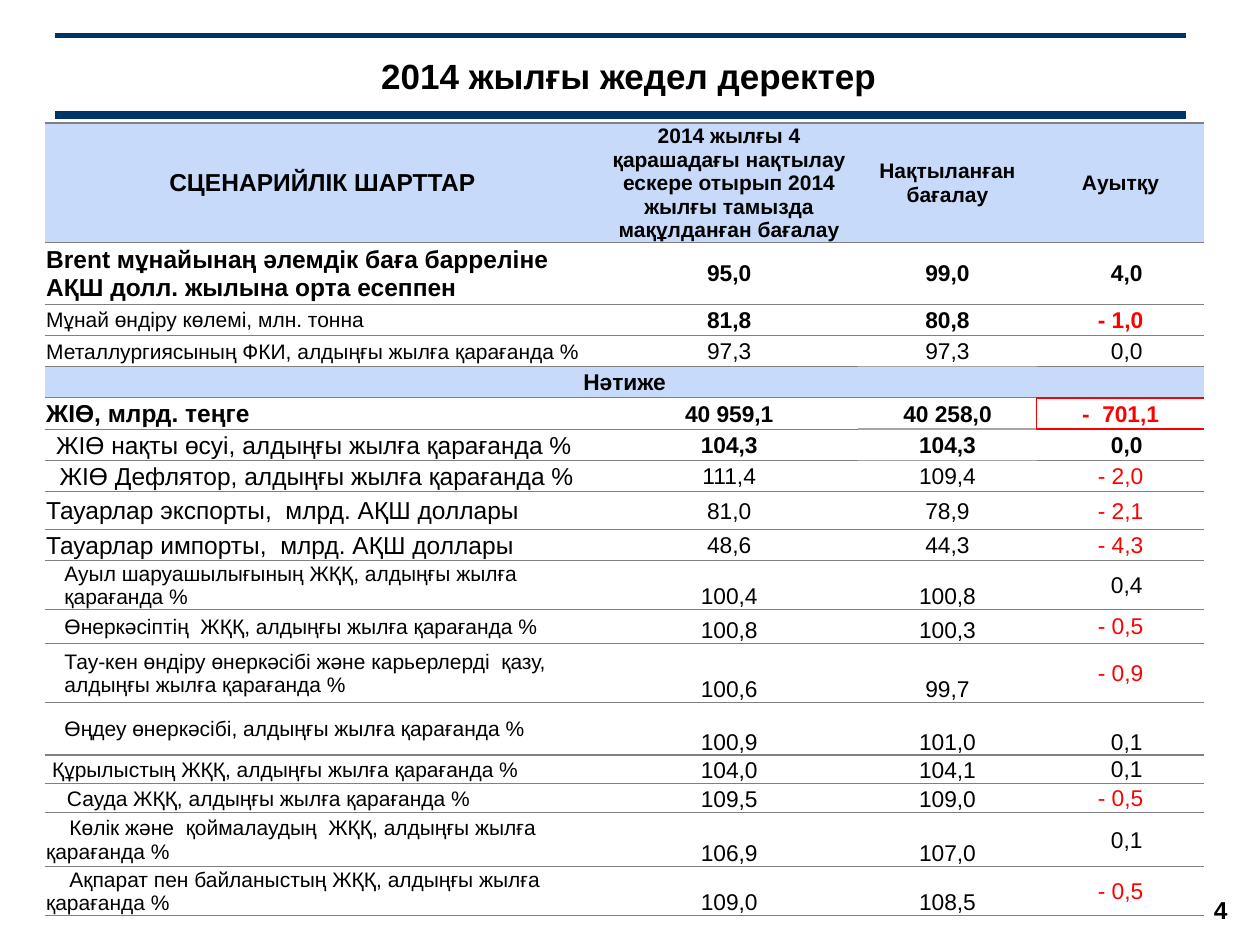
from dataclasses import dataclass

from pptx import Presentation
from pptx.dml.color import RGBColor
from pptx.enum.shapes import MSO_CONNECTOR, MSO_SHAPE
from pptx.enum.text import MSO_ANCHOR, PP_ALIGN
from pptx.oxml.ns import qn
from pptx.util import Cm, Pt
from lxml.etree import SubElement

COLORS = {
    "navy": "003366",
    "black": "000000",
    "white": "FFFFFF",
    "red": "FF0000",
    "header": "C7DAF9",
    "rule": "808080",
    "light_rule": "A6A6A6",
}
FONT = "Arial"
COLUMN_WIDTHS = [11.2, 5.2, 3.6, 3.38]
HEADERS = [
    ("СЦЕНАРИЙЛІК ШАРТТАР", 14),
    ("2014 жылғы 4 қарашадағы нақтылау ескере отырып 2014 жылғы тамызда мақұлданған бағалау", 12),
    ("Нақтыланған\nбағалау", 12),
    ("Ауытқу", 12),
]
HEADER_HEIGHT = 2.4
SECTION = "Нәтиже"
SECTION_ROW = 4
RED_ROW = 5
THIN = ("rule", 0.75)
LIGHT = ("light_rule", 1)
RED = ("red", 1)
SPECIAL_BORDERS = {
    (3, 2): {"B": LIGHT},
    (5, 2): {"R": RED, "B": LIGHT},
    (5, 3): {"L": RED, "T": RED, "B": RED},
    (6, 2): {"T": LIGHT, "B": LIGHT},
    (6, 3): {"T": RED},
    (7, 2): {"T": LIGHT},
}


@dataclass
class Row:
    height: float
    label: str
    values: tuple
    size: int = 12
    label_bold: bool = False
    bold: bool = False
    inset: float = 0.03
    first_indent: float = 0
    low: bool = False
    change_low: bool = False


ROWS = [
    Row(1.25, "Brent мұнайынаң әлемдік баға барреліне\vАҚШ долл. жылына орта есеппен",
        ("95,0", "99,0", "4,0"), 14, True, True),
    Row(0.63, "Мұнай өндіру көлемі, млн. тонна", ("81,8", "80,8", "- 1,0"), bold=True),
    Row(0.63, "Металлургиясының ФКИ, алдыңғы жылға қарағанда %", ("97,3", "97,3", "0,0")),
    Row(0.63, SECTION, ()),
    Row(0.63, "ЖІӨ, млрд. теңге", ("40 959,1", "40 258,0", "-  701,1"), 14, True, True),
    Row(0.63, "ЖІӨ нақты өсуі, алдыңғы жылға қарағанда %", ("104,3", "104,3", "0,0"),
        14, bold=True, inset=0.23),
    Row(0.63, "ЖІӨ Дефлятор, алдыңғы жылға қарағанда %", ("111,4", "109,4", "- 2,0"),
        14, inset=0.3),
    Row(0.76, "Тауарлар экспорты,  млрд. АҚШ доллары", ("81,0", "78,9", "- 2,1"), 14),
    Row(0.63, "Тауарлар импорты,  млрд. АҚШ доллары", ("48,6", "44,3", "- 4,3"), 14),
    Row(0.97, "Ауыл шаруашылығының ЖҚҚ, алдыңғы жылға қарағанда %",
        ("100,4", "100,8", "0,4"), inset=0.4, low=True),
    Row(0.69, "Өнеркәсіптің  ЖҚҚ, алдыңғы жылға қарағанда %",
        ("100,8", "100,3", "- 0,5"), inset=0.4, low=True),
    Row(1.19, "Тау-кен өндіру өнеркәсібі және карьерлерді  қазу,\nалдыңғы жылға қарағанда %",
        ("100,6", "99,7", "- 0,9"), inset=0.4, low=True),
    Row(1.06, "Өңдеу өнеркәсібі, алдыңғы жылға қарағанда %",
        ("100,9", "101,0", "0,1"), inset=0.4, low=True, change_low=True),
    Row(0.58, "Құрылыстың ЖҚҚ, алдыңғы жылға қарағанда %",
        ("104,0", "104,1", "0,1"), inset=0.15, low=True),
    Row(0.58, "Сауда ЖҚҚ, алдыңғы жылға қарағанда %",
        ("109,5", "109,0", "- 0,5"), inset=0.45, low=True),
    Row(1.09, "Көлік және  қоймалаудың  ЖҚҚ, алдыңғы жылға қарағанда %",
        ("106,9", "107,0", "0,1"), first_indent=0.47, low=True),
    Row(0.97, "Ақпарат пен байланыстың ЖҚҚ, алдыңғы жылға қарағанда %",
        ("109,0", "108,5", "- 0,5"), first_indent=0.47, low=True),
]


def rgb(name):
    return RGBColor.from_string(COLORS[name])


def write(frame, text, size, bold=False, color="black", align=PP_ALIGN.CENTER):
    frame.word_wrap = True
    for index, content in enumerate(text.split("\n")):
        para = frame.paragraphs[0] if index == 0 else frame.add_paragraph()
        para.alignment = align
        for part, line in enumerate(content.split("\v")):
            if part:
                para.add_line_break()
            span = para.add_run()
            span.text = line
            span.font.name = FONT
            span.font.size = Pt(size)
            span.font.bold = bold
            span.font.color.rgb = rgb(color)


def fill_box(box, color):
    box.fill.solid()
    box.fill.fore_color.rgb = rgb(color)


def add_rule(page, top, weight):
    line = page.shapes.add_connector(
        MSO_CONNECTOR.STRAIGHT, Cm(23.9), Cm(top), Cm(1.1), Cm(top))
    line.line.color.rgb = rgb("navy")
    line.line.width = Pt(weight)
    SubElement(line._element.spPr, qn("a:effectLst"))


def add_title(page, text):
    title = page.shapes.title
    title.left, title.top, title.width, title.height = Cm(1.1), Cm(0.8), Cm(22.9), Cm(1.44)
    fill_box(title, "white")
    title.text_frame.vertical_anchor = MSO_ANCHOR.MIDDLE
    write(title.text_frame, text, 20, True)
    para = title.text_frame.paragraphs[0]
    para.space_before = Pt(6)
    para._p.get_or_add_pPr().set("marL", str(Cm(0.25)))


def add_page_number(page, number):
    box = page.shapes.add_shape(MSO_SHAPE.RECTANGLE, Cm(23.85), Cm(17.63), Cm(1.52), Cm(1.4))
    box.shadow.inherit = False
    box.line.fill.background()
    fill_box(box, "white")
    box.text_frame.vertical_anchor = MSO_ANCHOR.MIDDLE
    write(box.text_frame, number, 14, True)


def format_cell(cell, borders, color="white", inset=0.03, anchor=MSO_ANCHOR.MIDDLE):
    cell.margin_left = Cm(inset)
    cell.margin_right = cell.margin_top = Cm(0.03)
    cell.margin_bottom = 0
    cell.vertical_anchor = anchor
    properties = cell._tc.get_or_add_tcPr()
    sides = {"L": None, "R": None, "T": THIN, "B": THIN, **borders}
    for side, style in sides.items():
        line = SubElement(properties, qn(f"a:ln{side}"))
        if style is None:
            SubElement(line, qn("a:noFill"))
            continue
        name, weight = style
        line.set("w", str(Pt(weight)))
        solid = SubElement(line, qn("a:solidFill"))
        SubElement(solid, qn("a:srgbClr")).set("val", COLORS[name])
    fill_box(cell, color)


def fill_row(table, index, row):
    label = table.cell(index, 0)
    format_cell(label, {}, inset=row.inset)
    write(label.text_frame, row.label, row.size, row.label_bold, align=PP_ALIGN.LEFT)
    if row.first_indent:
        properties = label.text_frame.paragraphs[0]._p.get_or_add_pPr()
        properties.set("indent", str(Cm(row.first_indent)))
    for column, value in enumerate(row.values, start=1):
        is_change = column == 3
        negative = value.startswith("-")
        low = row.change_low if is_change else row.low
        cell = table.cell(index, column)
        format_cell(cell, SPECIAL_BORDERS.get((index, column), {}),
                    inset=0.28 if is_change and not negative else 0.03,
                    anchor=MSO_ANCHOR.BOTTOM if low else MSO_ANCHOR.MIDDLE)
        write(cell.text_frame, value, 13, row.bold, "red" if negative else "black")


def fill_section(table):
    for column in range(len(COLUMN_WIDTHS)):
        borders = {"B": RED} if column == 3 else {}
        format_cell(table.cell(SECTION_ROW, column), borders, "header")
    first = table.cell(SECTION_ROW, 0)
    first.merge(table.cell(SECTION_ROW, 3))
    write(first.text_frame, SECTION, 13, True)


def add_scenario_table(page):
    heights = [HEADER_HEIGHT] + [row.height for row in ROWS]
    frame = page.shapes.add_table(
        len(heights), len(COLUMN_WIDTHS), Cm(0.9), Cm(2.48),
        Cm(sum(COLUMN_WIDTHS)), Cm(sum(heights)))
    table = frame.table
    table.first_row = table.horz_banding = False
    for column, width in zip(table.columns, COLUMN_WIDTHS):
        column.width = Cm(width)
    for row, height in zip(table.rows, heights):
        row.height = Cm(height)
    for column, (text, size) in enumerate(HEADERS):
        cell = table.cell(0, column)
        format_cell(cell, {}, "header")
        write(cell.text_frame, text, size, True)
    for index, row in enumerate(ROWS, start=1):
        if index == SECTION_ROW:
            fill_section(table)
        else:
            fill_row(table, index, row)


def main():
    deck = Presentation()
    deck.slide_width, deck.slide_height = Cm(25.4), Cm(19.05)
    page = deck.slides.add_slide(deck.slide_layouts[5])
    add_title(page, "2014 жылғы жедел деректер")
    add_rule(page, 2.31, 4.5)
    add_rule(page, 0.71, 3)
    add_page_number(page, "4")
    add_scenario_table(page)
    deck.save("out.pptx")


if __name__ == "__main__":
    main()
